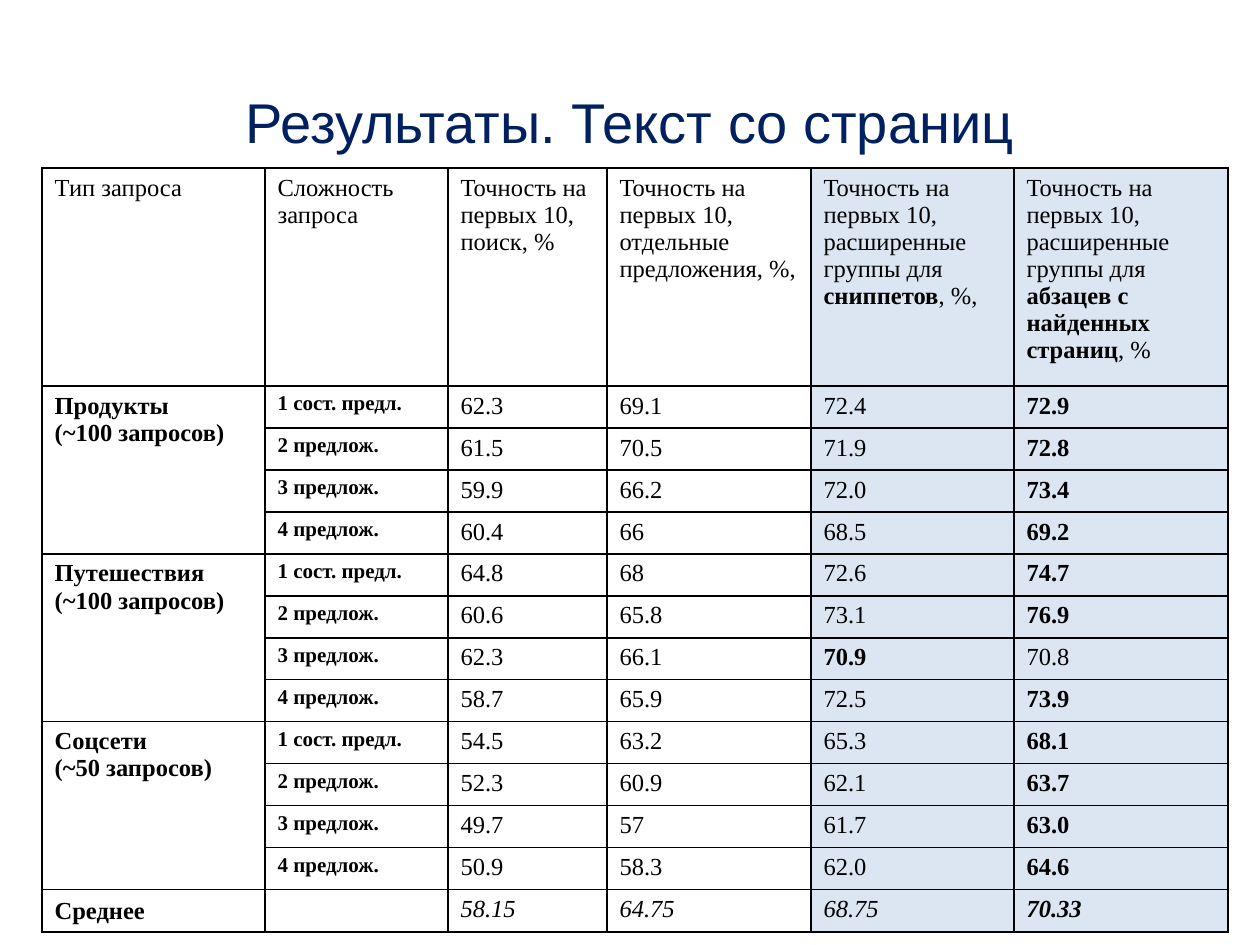
"""Build the slide with the table of search precision by query type and complexity."""
from dataclasses import dataclass

from lxml import etree
from pptx import Presentation
from pptx import util as u
from pptx.dml.color import RGBColor
from pptx.enum import text
from pptx.oxml.ns import qn

PX = u.Inches(1) // 126
NAVY = RGBColor(0x00, 0x20, 0x60)
BLACK = RGBColor(0x00, 0x00, 0x00)
PALE_BLUE = RGBColor(0xDC, 0xE6, 0xF2)
SERIF = "Times New Roman"

COLUMN_WIDTHS = (223, 183, 159, 204, 203, 214)
HEADER_HEIGHT, ROW_HEIGHT = 218, 42
FIRST_SHADED = 4
LEVELS = ("1 сост. предл.", "2 предлож.", "3 предлож.", "4 предлож.")
EXPANDED = "Точность на первых 10, расширенные группы для "
HEADERS = (
    ("Тип запроса",),
    ("Сложность запроса",),
    ("Точность на первых 10, поиск, %",),
    ("Точность на первых 10, отдельные предложения, %,",),
    (EXPANDED, "сниппетов", ", %,"),
    (EXPANDED, "абзацев с найденных страниц", ", %"),
)
AVERAGES = ("58.15", "64.75", "68.75", "70.33")


@dataclass(frozen=True)
class QueryGroup:
    """A query type, its sample size and a row of precisions per level."""
    name: str
    sample: str
    rows: tuple[str, ...]


GROUPS = (
    QueryGroup("Продукты", "(~100 запросов)", (
        "62.3 69.1 72.4 72.9", "61.5 70.5 71.9 72.8",
        "59.9 66.2 72.0 73.4", "60.4 66 68.5 69.2")),
    QueryGroup("Путешествия", "(~100 запросов)", (
        "64.8 68 72.6 74.7", "60.6 65.8 73.1 76.9",
        "62.3 66.1 70.9 70.8", "58.7 65.9 72.5 73.9")),
    QueryGroup("Соцсети", "(~50 запросов)", (
        "54.5 63.2 65.3 68.1", "52.3 60.9 62.1 63.7",
        "49.7 57 61.7 63.0", "50.9 58.3 62.0 64.6")),
)


def add_run(p, content: str, *, size: int = 14, font: str = SERIF,
            color: RGBColor = BLACK, bold: bool = False, italic: bool = False) -> None:
    """Append formatted text to a paragraph."""
    r = p.add_run()
    r.text = content
    r.font.size, r.font.name = u.Pt(size), font
    r.font.bold, r.font.italic = bold, italic
    r.font.color.rgb = color


def style_cell(cell, shaded: bool) -> None:
    """Set the fill and the four black borders of a cell."""
    if shaded:
        cell.fill.solid()
        cell.fill.fore_color.rgb = PALE_BLUE
    else:
        cell.fill.background()
    tc_pr = cell._tc.get_or_add_tcPr()
    for i, side in enumerate(("lnL", "lnR", "lnT", "lnB")):
        ln = etree.Element(qn(f"a:{side}"), w=str(u.Pt(1)))
        fill = etree.SubElement(ln, qn("a:solidFill"))
        etree.SubElement(fill, qn("a:srgbClr"), val=str(BLACK))
        tc_pr.insert(i, ln)


def fill_values(table, row: int, values: list[str], italic: bool = False) -> None:
    """Write a row of precisions with the best one in bold."""
    best = max(values, key=float)
    for col, value in enumerate(values, 2):
        add_run(table.cell(row, col).text_frame.paragraphs[0], value,
                bold=value == best, italic=italic)


def fill_group(table, top: int, group: QueryGroup) -> None:
    """Write the merged name cell and the level rows of a query group."""
    cell = table.cell(top, 0)
    cell.merge(table.cell(top + len(LEVELS) - 1, 0))
    tf = cell.text_frame
    add_run(tf.paragraphs[0], group.name, bold=True)
    add_run(tf.add_paragraph(), group.sample, bold=True)
    for row, (level, values) in enumerate(zip(LEVELS, group.rows), top):
        add_run(table.cell(row, 1).text_frame.paragraphs[0], level, size=12, bold=True)
        fill_values(table, row, values.split())


def add_results(slide) -> None:
    """Add the table of results."""
    last = len(GROUPS) * len(LEVELS) + 1
    height = HEADER_HEIGHT + last * ROW_HEIGHT
    table = slide.shapes.add_table(
        last + 1, len(COLUMN_WIDTHS), 42 * PX, 168 * PX,
        sum(COLUMN_WIDTHS) * PX, height * PX).table
    table.first_row = table.horz_banding = False
    for column, width in zip(table.columns, COLUMN_WIDTHS):
        column.width = width * PX
    for i, row in enumerate(table.rows):
        row.height = (ROW_HEIGHT if i else HEADER_HEIGHT) * PX
        for col, cell in enumerate(row.cells):
            style_cell(cell, col >= FIRST_SHADED)

    for col, parts in enumerate(HEADERS):
        p = table.cell(0, col).text_frame.paragraphs[0]
        for i, part in enumerate(parts):
            add_run(p, part, bold=i == 1)
    for i, group in enumerate(GROUPS):
        fill_group(table, 1 + i * len(LEVELS), group)

    mean = table.cell(last, 0)
    mean.vertical_anchor = text.MSO_ANCHOR.MIDDLE
    add_run(mean.text_frame.paragraphs[0], "Среднее", bold=True)
    empty = table.cell(last, 1).text_frame.paragraphs[0]
    etree.SubElement(empty._p, qn("a:endParaRPr"), sz="1400")
    fill_values(table, last, list(AVERAGES), italic=True)


def main() -> None:
    """Create and save the presentation."""
    prs = Presentation()
    prs.slide_width, prs.slide_height = u.Inches(10), u.Inches(7.5)
    slide = prs.slides.add_slide(prs.slide_layouts[5])
    title = slide.shapes.title
    title.left, title.top, title.width, title.height = (
        n * PX for n in (63, 42, 1134, 158))
    tf = title.text_frame
    tf.vertical_anchor = text.MSO_ANCHOR.MIDDLE
    p = tf.paragraphs[0]
    p.alignment = text.PP_ALIGN.CENTER
    add_run(p, "Результаты. Текст со страниц", size=32, font="Arial", color=NAVY)
    add_results(slide)
    prs.save("out.pptx")


if __name__ == "__main__":
    main()
